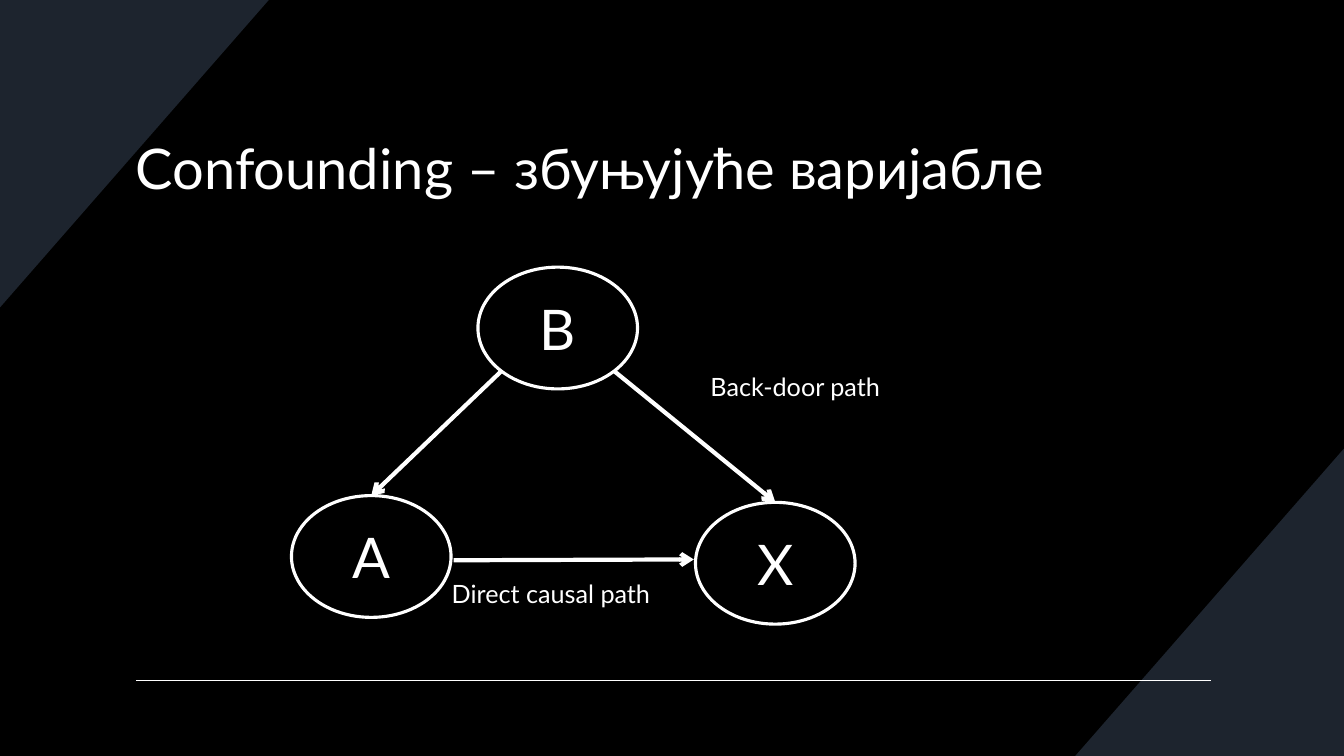
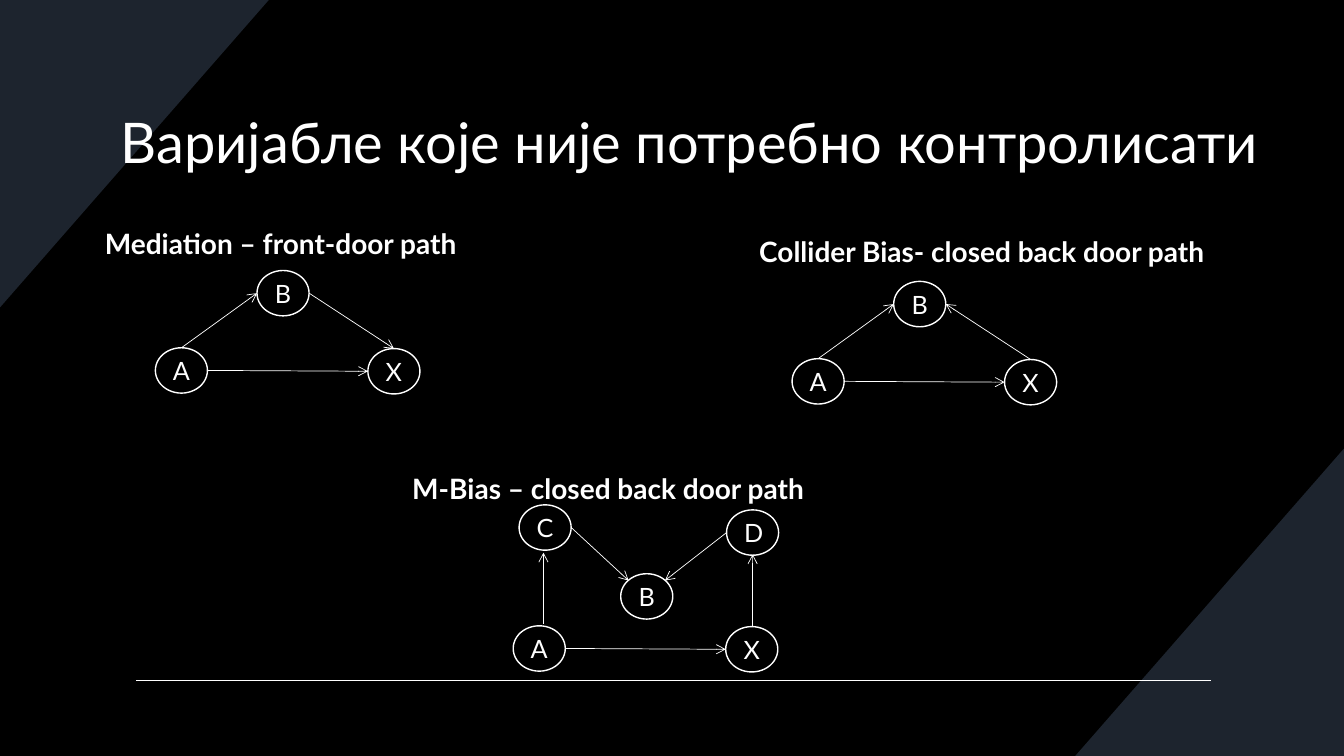
"""Build two slides of causal diagrams on a shared dark theme."""
from enum import Enum
from typing import NamedTuple

from lxml import etree
from pptx import Presentation
from pptx import util as u
from pptx.dml.color import RGBColor
from pptx.enum import shapes, text
from pptx.oxml import ns

COLUMNS, ROWS = 160, 90
CELL = u.Inches(7.5) // ROWS
BLACK = RGBColor(0x00, 0x00, 0x00)
WHITE = RGBColor(0xFF, 0xFF, 0xFF)
NAVY = RGBColor(0x1D, 0x24, 0x2E)
FONT = "Lato"
WEDGE_COLUMNS, WEDGE_ROWS = 32, 36.6
TITLE_ROWS, HEADING_ROWS, LABEL_ROWS = 17.9, 26.2, 4.8


class Point(NamedTuple):
    """A place on the grid."""
    column: float
    row: float


class Side(Enum):
    """Places on an ellipse, as shares of its width and height."""
    TOP = (0.5, 0)
    TOP_LEFT = (0.15, 0.15)
    TOP_RIGHT = (0.85, 0.15)
    LEFT = (0, 0.5)
    RIGHT = (1, 0.5)
    BOTTOM_LEFT = (0.15, 0.85)
    BOTTOM_RIGHT = (0.85, 0.85)


class Style(NamedTuple):
    """Size and weight of a diagram."""
    columns: float
    rows: float
    font_size: float
    outline: float
    arrow: float


class Edge(NamedTuple):
    """An arrow between the sides of two nodes."""
    tail: str
    tail_side: Side
    head: str
    head_side: Side


class Diagram(NamedTuple):
    """Nodes by letter, their edges, and arrows that stand clear of the nodes."""
    style: Style
    nodes: dict[str, Point]
    edges: list[Edge]
    arrows: list[tuple[Point, Point]] = []


class Caption(NamedTuple):
    """A text with its place and width."""
    wording: str
    corner: Point
    columns: float


LARGE = Style(19, 14.5, 40, 2.25, 3)
SMALL = Style(6.2, 5.4, 18, 1, 0.5)
ACROSS = Edge("A", Side.RIGHT, "X", Side.LEFT)
RISING = Edge("A", Side.TOP, "B", Side.LEFT)

CONFOUNDING = Diagram(
    LARGE,
    {"A": Point(34.7, 59), "X": Point(82.8, 59.8), "B": Point(56.9, 31.8)},
    [Edge("B", Side.BOTTOM_RIGHT, "X", Side.TOP),
     Edge("B", Side.BOTTOM_LEFT, "A", Side.TOP)],
    [(Point(54, 66.7), Point(82.6, 66.6))],
)
M_BIAS = Diagram(
    SMALL,
    {"A": Point(61.1, 74.5), "X": Point(86.4, 74.6), "B": Point(73.9, 68.3),
     "C": Point(61.8, 60.1), "D": Point(86.5, 60.7)},
    [ACROSS,
     Edge("C", Side.RIGHT, "B", Side.TOP_LEFT),
     Edge("D", Side.LEFT, "B", Side.TOP_RIGHT)],
    [(Point(64.7, 74.3), Point(64.7, 65.8)), (Point(89.6, 74.5), Point(89.6, 66))],
)
PATH_LABELS = [
    Caption("Back-door path", Point(83.4, 43.6), 33.1),
    Caption("Direct causal path", Point(52.6, 68.3), 33.1),
]
HEADINGS = [
    Caption("Mediation – front-door path", Point(11.3, 25.6), 57.4),
    Caption("Collider Bias- closed back door path", Point(89.2, 26.5), 61.2),
    Caption("M-Bias – closed back door path", Point(47.9, 54.8), 56.4),
]


def cells(count: float) -> u.Emu:
    """Turn a count of grid cells into a length."""
    return u.Emu(round(count * CELL))


def triangle(corner: Point, last_edge: Edge) -> Diagram:
    """Lay out a small A, B, X triangle from the corner of its frame."""
    offsets = {"A": Point(0, 9.2), "X": Point(25.3, 9.3), "B": Point(12.1, 0)}
    nodes = {letter: Point(corner.column + offset.column, corner.row + offset.row)
             for letter, offset in offsets.items()}
    return Diagram(SMALL, nodes, [ACROSS, RISING, last_edge])


def write(paragraph, wording: str, size: float, bold: bool = False) -> None:
    """Add one run in the shared typeface."""
    run = paragraph.add_run()
    run.text = wording
    run.font.name = FONT
    run.font.size = u.Pt(size)
    run.font.bold = bold
    run.font.color.rgb = WHITE


def add_caption(slide, caption: Caption, rows: float, size: float, bold: bool = False):
    """Add a wrapping text box and return its frame."""
    box = slide.shapes.add_textbox(*map(cells, (*caption.corner, caption.columns, rows)))
    frame = box.text_frame
    frame.word_wrap = True
    write(frame.paragraphs[0], caption.wording, size, bold)
    return frame


def add_title(slide, caption: Caption) -> None:
    """Add the slide title."""
    frame = add_caption(slide, caption, TITLE_ROWS, 40)
    frame.vertical_anchor = text.MSO_ANCHOR.MIDDLE
    frame.paragraphs[0].line_spacing = 0.9


def add_heading(slide, caption: Caption) -> None:
    """Add the bold heading of a diagram."""
    paragraph = add_caption(slide, caption, HEADING_ROWS, 20, True).paragraphs[0]
    paragraph.line_spacing = 1.2
    paragraph.space_before = u.Pt(10)


def add_line(slide, start: Point, end: Point, width: float, arrow: bool = False):
    """Add a straight white line, with an arrowhead if asked."""
    line = slide.shapes.add_connector(
        shapes.MSO_CONNECTOR.STRAIGHT, *map(cells, (*start, *end)))
    line.line.color.rgb = WHITE
    line.line.width = u.Pt(width)
    if arrow:
        outline = line.line._get_or_add_ln()
        etree.SubElement(outline, ns.qn("a:tailEnd"), type="arrow")
    etree.SubElement(line._element.spPr, ns.qn("a:effectLst"))
    return line


def add_wedge(slide, corner: Point, direction: int) -> None:
    """Add a triangle that reaches inward from a corner of the slide."""
    across = corner.column + direction * WEDGE_COLUMNS
    along = corner.row + direction * WEDGE_ROWS
    builder = slide.shapes.build_freeform(*map(cells, corner))
    builder.add_line_segments(
        [(cells(across), cells(corner.row)), (cells(corner.column), cells(along))])
    wedge = builder.convert_to_shape()
    wedge.shadow.inherit = False
    wedge.fill.solid()
    wedge.fill.fore_color.rgb = NAVY
    wedge.line.fill.background()


def add_node(slide, letter: str, corner: Point, style: Style):
    """Add a lettered ellipse."""
    node = slide.shapes.add_shape(
        shapes.MSO_SHAPE.OVAL, *map(cells, (*corner, style.columns, style.rows)))
    node.shadow.inherit = False
    node.fill.solid()
    node.fill.fore_color.rgb = BLACK
    node.line.color.rgb = WHITE
    node.line.width = u.Pt(style.outline)
    node.text_frame.vertical_anchor = text.MSO_ANCHOR.MIDDLE
    paragraph = node.text_frame.paragraphs[0]
    paragraph.alignment = text.PP_ALIGN.CENTER
    write(paragraph, letter, style.font_size)
    return node


def side_point(diagram: Diagram, letter: str, side: Side) -> Point:
    """Find a place on the outline of a node."""
    corner, style = diagram.nodes[letter], diagram.style
    across, down = side.value
    return Point(corner.column + across * style.columns, corner.row + down * style.rows)


def add_diagram(slide, diagram: Diagram) -> None:
    """Add the nodes and arrows of a diagram, joining arrows at node tops."""
    nodes = {letter: add_node(slide, letter, corner, diagram.style)
             for letter, corner in diagram.nodes.items()}
    for edge in diagram.edges:
        line = add_line(slide, side_point(diagram, edge.tail, edge.tail_side),
                        side_point(diagram, edge.head, edge.head_side),
                        diagram.style.arrow, arrow=True)
        if edge.tail_side is Side.TOP:
            line.begin_connect(nodes[edge.tail], 0)
        if edge.head_side is Side.TOP:
            line.end_connect(nodes[edge.head], 0)
    for start, end in diagram.arrows:
        add_line(slide, start, end, diagram.style.arrow, arrow=True)


def add_slide(presentation, title: Caption):
    """Add a slide with the shared background, wedges, footer line and title."""
    slide = presentation.slides.add_slide(presentation.slide_layouts[6])
    slide.background.fill.solid()
    slide.background.fill.fore_color.rgb = BLACK
    add_wedge(slide, Point(COLUMNS, ROWS), -1)
    add_wedge(slide, Point(0, 0), 1)
    add_line(slide, Point(16.2, 81), Point(144.2, 81), 1)
    add_title(slide, title)
    return slide


def build_confounding(presentation) -> None:
    """Build the slide on confounding variables."""
    slide = add_slide(
        presentation, Caption("Confounding – збуњујуће варијабле", Point(15, 11.4), 130))
    add_diagram(slide, CONFOUNDING)
    for label in PATH_LABELS:
        frame = add_caption(slide, label, LABEL_ROWS, 18)
        frame.auto_size = text.MSO_AUTO_SIZE.SHAPE_TO_FIT_TEXT


def build_uncontrolled(presentation) -> None:
    """Build the slide on variables that need no control."""
    slide = add_slide(
        presentation,
        Caption("Варијабле које није потребно контролисати", Point(13.2, 8.3), 146.8))
    for heading in HEADINGS:
        add_heading(slide, heading)
    mediation = triangle(Point(18.5, 32.2), Edge("B", Side.RIGHT, "X", Side.TOP))
    collider = triangle(Point(94.3, 33.5), Edge("X", Side.TOP, "B", Side.RIGHT))
    for diagram in (mediation, collider, M_BIAS):
        add_diagram(slide, diagram)


def main() -> None:
    """Build and save the presentation."""
    presentation = Presentation()
    presentation.slide_width = cells(COLUMNS)
    presentation.slide_height = cells(ROWS)
    build_confounding(presentation)
    build_uncontrolled(presentation)
    presentation.save("out.pptx")


if __name__ == "__main__":
    main()
